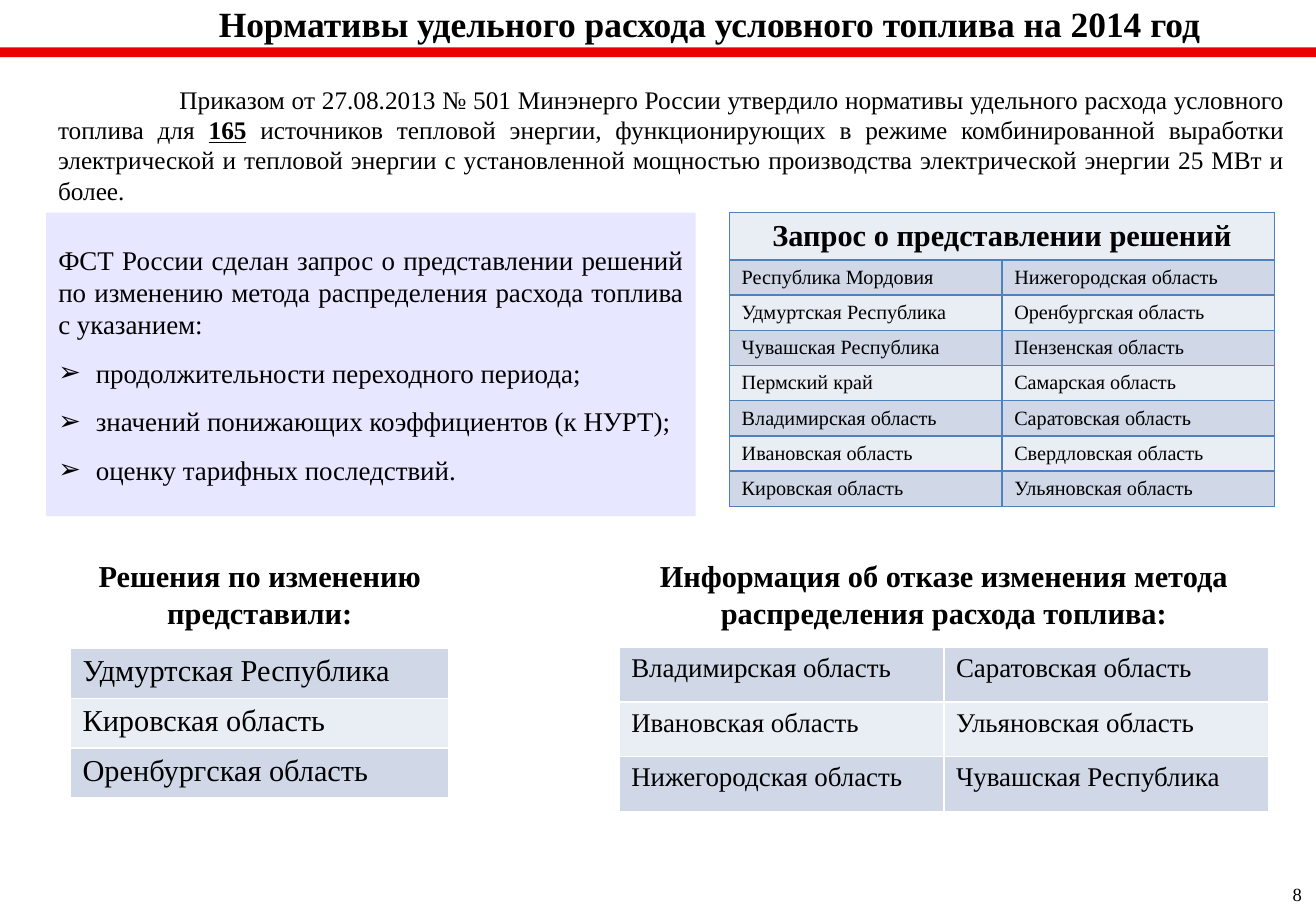
from pptx import Presentation
from pptx.dml.color import RGBColor
from pptx.enum.shapes import MSO_SHAPE
from pptx.enum.text import MSO_ANCHOR, MSO_AUTO_SIZE, PP_ALIGN
from pptx.oxml.ns import qn
from pptx.util import Inches, Pt
from lxml import etree

LEFT, MID, FULL = PP_ALIGN.LEFT, PP_ALIGN.CENTER, PP_ALIGN.JUSTIFY
TOP, HALF = MSO_ANCHOR.TOP, MSO_ANCHOR.MIDDLE
RECT = MSO_SHAPE.RECTANGLE
BLACK = RGBColor(0x00, 0x00, 0x00)
WHITE = RGBColor(0xFF, 0xFF, 0xFF)
RED = RGBColor(0xEB, 0x00, 0x00)
LILAC = RGBColor(0xE7, 0xE7, 0xFF)
BLUE = RGBColor(0x4F, 0x81, 0xBD)
BANDS = (RGBColor(0xD0, 0xD8, 0xE8), RGBColor(0xE9, 0xED, 0xF4))
FACE = "Times New Roman"

# Content
TITLE = "Нормативы удельного расхода условного топлива на 2014 год"
INTRO = [
    ("Приказом от 27.08.2013 № 501 Минэнерго России утвердило нормативы "
     "удельного расхода условного топлива для ", {}),
    ("165", {"bold": True, "underline": True}),
    (" источников тепловой энергии, функционирующих в режиме "
     "комбинированной выработки электрической и тепловой энергии с "
     "установленной мощностью производства электрической энергии 25 МВт "
     "и более.", {}),
]
LEAD = ("ФСТ России сделан запрос о представлении решений по изменению "
        "метода распределения расхода топлива с указанием:")
POINTS = [
    "продолжительности переходного периода;",
    "значений понижающих коэффициентов (к НУРТ);",
    "оценку тарифных последствий.",
]
ASKED = [
    ("Республика Мордовия", "Нижегородская область"),
    ("Удмуртская Республика", "Оренбургская область"),
    ("Чувашская Республика", "Пензенская область"),
    ("Пермский край", "Самарская область"),
    ("Владимирская область", "Саратовская область"),
    ("Ивановская область", "Свердловская область"),
    ("Кировская область", "Ульяновская область"),
]
AGREED = [
    ("Удмуртская Республика",),
    ("Кировская область",),
    ("Оренбургская область",),
]
REFUSED = [
    ("Владимирская область", "Саратовская область"),
    ("Ивановская область", "Ульяновская область"),
    ("Нижегородская область", "Чувашская Республика"),
]
# rows, left, top, width, row height, text size, border, anchor, header
TABLES = [
    (ASKED, 6.01, 1.75, 4.49, 0.29, 12, BLUE, HALF,
     "Запрос о представлении решений"),
    (AGREED, 0.58, 5.34, 3.12, 0.41, 18, WHITE, TOP, None),
    (REFUSED, 5.1, 5.33, 5.35, 0.45, 16, WHITE, TOP, None),
]
HEAD_TALL = 0.39
# text, left, top, width, height, format
LABELS = [
    ("Решения по изменению представили:", 0.58, 4.54, 3.12, 0.71,
     {"size": Pt(18), "bold": True}, MID),
    ("Информация об отказе изменения метода распределения расхода топлива:",
     5.1, 4.54, 5.35, 0.71, {"size": Pt(18), "bold": True}, MID),
    ("8", 10.55, 7.22, 0.28, 0.29, {"size": Pt(11)}, LEFT),
]


def style(font, form):
    for key, val in {"name": FACE, "bold": False, **form}.items():
        setattr(font, key, val)
    font.color.rgb = BLACK


def write(para, runs, form, align):
    para.alignment = align
    for text, extra in runs:
        run = para.add_run()
        run.text = text
        style(run.font, {**form, **extra})


def indent(para, left, first, mark=None):
    props = para._p.get_or_add_pPr()
    props.set("marL", str(Inches(left)))
    props.set("indent", str(Inches(first)))
    if mark:
        etree.SubElement(props, qn("a:buChar")).set("char", mark)
    else:
        etree.SubElement(props, qn("a:buNone"))


def place(shape, *box):
    for key, val in zip(("left", "top", "width", "height"), box):
        setattr(shape, key, Inches(val))


def edge(cell, color):
    props = cell._tc.get_or_add_tcPr()
    for n, side in enumerate(("lnL", "lnR", "lnT", "lnB")):
        line = etree.Element(qn("a:" + side), w=str(Pt(1)))
        solid = etree.SubElement(line, qn("a:solidFill"))
        etree.SubElement(solid, qn("a:srgbClr")).set("val", str(color))
        props.insert(n, line)


def frame(shape, anchor):
    text = shape.text_frame
    text.word_wrap = True
    text.auto_size = MSO_AUTO_SIZE.NONE
    text.vertical_anchor = anchor
    return text


def add_text(slide, box, runs, form, align, anchor=TOP):
    text = frame(slide.shapes.add_textbox(*map(Inches, box)), anchor)
    write(text.paragraphs[0], runs, form, align)
    return text.paragraphs[0]


def add_grid(slide, rows, left, top, width, tall, size, color, anchor, head):
    cols = len(rows[0])
    skip = 1 if head else 0
    lines = [(head,) + ("",) * (cols - 1)] * skip + rows
    talls = [HEAD_TALL] * skip + [tall] * len(rows)
    box = map(Inches, (left, top, width, sum(talls)))
    table = slide.shapes.add_table(len(lines), cols, *box).table
    table.first_row = table.horz_banding = False
    for i, line in enumerate(lines):
        table.rows[i].height = Inches(talls[i])
        top_row = i < skip
        form = {"size": Pt(18 if top_row else size), "bold": top_row}
        for j, text in enumerate(line):
            cell = table.cell(i, j)
            cell.vertical_anchor = anchor
            cell.fill.solid()
            cell.fill.fore_color.rgb = BANDS[(i - skip) % 2]
            edge(cell, color)
            if text:
                write(cell.text_frame.paragraphs[0], [(text, {})], form,
                      MID if top_row else LEFT)
    if head:
        table.cell(0, 0).merge(table.cell(0, cols - 1))


def main():
    deck = Presentation()
    deck.slide_width, deck.slide_height = Inches(10.84), Inches(7.5)
    slide = deck.slides.add_slide(deck.slide_layouts[1])

    # Title and red rule
    title = slide.shapes.title
    place(title, 1.15, -0.03, 9.39, 0.39)
    write(frame(title, TOP).paragraphs[0], [(TITLE, {})],
          {"size": Pt(21), "bold": True}, MID)
    bar = slide.shapes.add_shape(RECT, 0, Inches(0.39), deck.slide_width,
                                 Inches(0.08))
    bar.shadow.inherit = False
    bar.fill.solid()
    bar.fill.fore_color.rgb = RED
    bar.line.fill.background()

    # Introduction
    para = add_text(slide, (0.38, 0.67, 10.3, 1.04), INTRO,
                    {"size": Pt(15)}, FULL, HALF)
    indent(para, 0, 1)

    # Request panel
    panel = slide.placeholders[1]
    place(panel, 0.38, 1.75, 5.35, 2.5)
    panel.fill.solid()
    panel.fill.fore_color.rgb = LILAC
    text = frame(panel, HALF)
    for n, line in enumerate([LEAD] + POINTS):
        para = text.add_paragraph() if n else text.paragraphs[0]
        if n:
            indent(para, 0.31, -0.31, "➢")
        else:
            indent(para, 0, 0)
        para.space_before = Pt(0)
        para.line_spacing = 1.5 if n else 1.0
        write(para, [(line, {})], {"size": Pt(16)}, FULL)

    # Tables, their captions and the page number
    for grid in TABLES:
        add_grid(slide, *grid)
    for label, *box, form, align in LABELS:
        add_text(slide, box, [(label, {})], form, align)

    deck.save("out.pptx")


if __name__ == "__main__":
    main()
